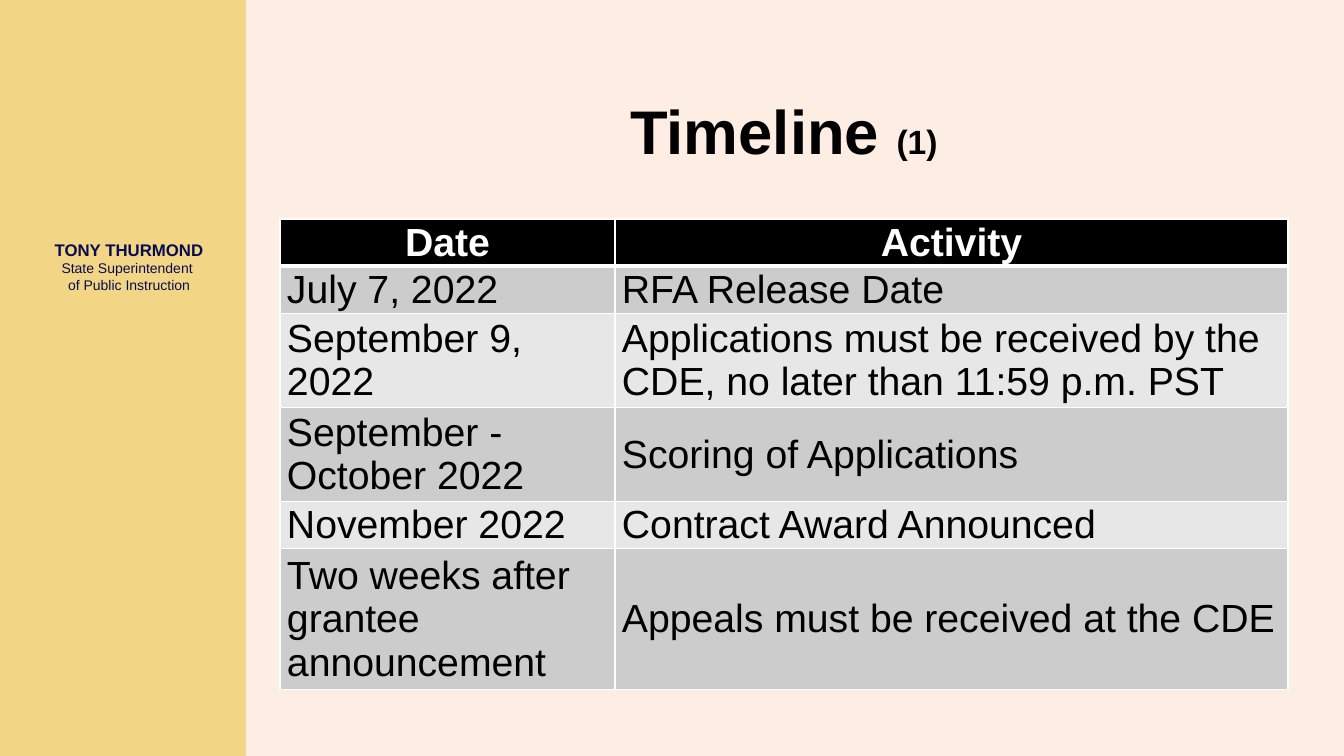
from dataclasses import dataclass

from lxml import etree
from pptx import Presentation
from pptx.dml.color import RGBColor
from pptx.enum.shapes import MSO_SHAPE
from pptx.enum.text import MSO_ANCHOR, PP_ALIGN
from pptx.oxml.ns import qn
from pptx.util import Emu, Pt

RECTANGLE = MSO_SHAPE.RECTANGLE
MIDDLE = MSO_ANCHOR.MIDDLE
LEFT, CENTER = PP_ALIGN.LEFT, PP_ALIGN.CENTER

# Content
TITLE, TITLE_NUMBER = "Timeline ", "(1)"
OFFICIAL = "TONY THURMOND"
OFFICE_LINES = ["State Superintendent ", "of Public Instruction"]
TIMELINE = [
    ("Date", "Activity"),
    ("July 7, 2022", "RFA Release Date"),
    ("September 9, 2022",
     "Applications must be received by the CDE, no later than 11:59 p.m. PST"),
    ("September - October 2022", "Scoring of Applications"),
    ("November 2022", "Contract Award Announced"),
    ("Two weeks after grantee announcement", "Appeals must be received at the CDE"),
]


@dataclass(frozen=True)
class Theme:
    font: str = "Arial"
    background: str = "FEEDE2"
    sidebar: str = "F3D685"
    navy: str = "070C51"
    black: str = "000000"
    white: str = "FFFFFF"
    bands: tuple = ("CCCCCC", "E7E7E7")
    title_size: int = 44
    number_size: int = 24
    table_size: int = 28
    name_size: int = 12
    office_size: int = 10


THEME = Theme()

# Geometry in px
SLIDE_WIDTH, SLIDE_HEIGHT = 1344, 756
SIDEBAR_WIDTH = 246
OFFICIAL_BOX = (35, 228, 188, 77)
TITLE_BOX = (280, 67, 1008, 126)
TABLE_LEFT, TABLE_TOP = 280, 219
COLUMN_WIDTHS = (335, 673)
ROW_HEIGHT = 41  # minimum; rows grow with their text
CELL_MARGIN = 7


def px(length):
    return Emu(round(length * 914400 / 100.8))


def color(value):
    return RGBColor.from_string(value)


def add_run(paragraph, text, size, ink, bold=False):
    run = paragraph.add_run()
    run.text = text
    run.font.name = THEME.font
    run.font.size = Pt(size)
    run.font.bold = bold
    run.font.color.rgb = color(ink)


def add_panel(slide, width, fill):
    shape = slide.shapes.add_shape(RECTANGLE, 0, 0, px(width), px(SLIDE_HEIGHT))
    shape.shadow.inherit = False
    shape.fill.solid()
    shape.fill.fore_color.rgb = color(fill)
    shape.line.fill.background()


def add_centered_text(slide, box):
    frame = slide.shapes.add_textbox(*map(px, box)).text_frame
    frame.word_wrap = True
    frame.vertical_anchor = MIDDLE
    paragraph = frame.paragraphs[0]
    paragraph.alignment = CENTER
    return paragraph


def add_borders(cell, bottom_width):
    properties = cell._tc.get_or_add_tcPr()
    for side, width in (("L", 1), ("R", 1), ("T", 1), ("B", bottom_width)):
        line = etree.SubElement(properties, qn(f"a:ln{side}"), w=str(Pt(width)))
        fill = etree.SubElement(line, qn("a:solidFill"))
        etree.SubElement(fill, qn("a:srgbClr"), val=THEME.white)


def format_cell(cell, text, row_index):
    header = row_index == 0
    # The heavy rule under the header is shared with the first data row
    add_borders(cell, 3 if header else 1)
    cell.fill.solid()
    band = THEME.bands[(row_index - 1) % 2]
    cell.fill.fore_color.rgb = color(THEME.black if header else band)
    cell.vertical_anchor = MIDDLE
    cell.margin_left = cell.margin_right = px(CELL_MARGIN)
    cell.margin_top = cell.margin_bottom = 0
    paragraph = cell.text_frame.paragraphs[0]
    paragraph.alignment = CENTER if header else LEFT
    add_run(paragraph, text, THEME.table_size,
            THEME.white if header else THEME.black, header)


def add_timeline(slide):
    table = slide.shapes.add_table(
        len(TIMELINE), len(COLUMN_WIDTHS), px(TABLE_LEFT), px(TABLE_TOP),
        px(sum(COLUMN_WIDTHS)), px(ROW_HEIGHT * len(TIMELINE))).table
    table.horz_banding = False
    for column, width in zip(table.columns, COLUMN_WIDTHS):
        column.width = px(width)
    for row_index, texts in enumerate(TIMELINE):
        for column_index, text in enumerate(texts):
            format_cell(table.cell(row_index, column_index), text, row_index)


def main():
    presentation = Presentation()
    presentation.slide_width = px(SLIDE_WIDTH)
    presentation.slide_height = px(SLIDE_HEIGHT)
    slide = presentation.slides.add_slide(presentation.slide_layouts[6])

    # Background and sidebar
    add_panel(slide, SLIDE_WIDTH, THEME.background)
    add_panel(slide, SIDEBAR_WIDTH, THEME.sidebar)

    # Official's name and office
    paragraph = add_centered_text(slide, OFFICIAL_BOX)
    add_run(paragraph, OFFICIAL, THEME.name_size, THEME.navy, True)
    for line in OFFICE_LINES:
        paragraph.add_line_break()
        add_run(paragraph, line, THEME.office_size, THEME.navy)

    # Title
    paragraph = add_centered_text(slide, TITLE_BOX)
    add_run(paragraph, TITLE, THEME.title_size, THEME.black, True)
    add_run(paragraph, TITLE_NUMBER, THEME.number_size, THEME.black, True)

    # Timeline table
    add_timeline(slide)

    presentation.save("out.pptx")


if __name__ == "__main__":
    main()
